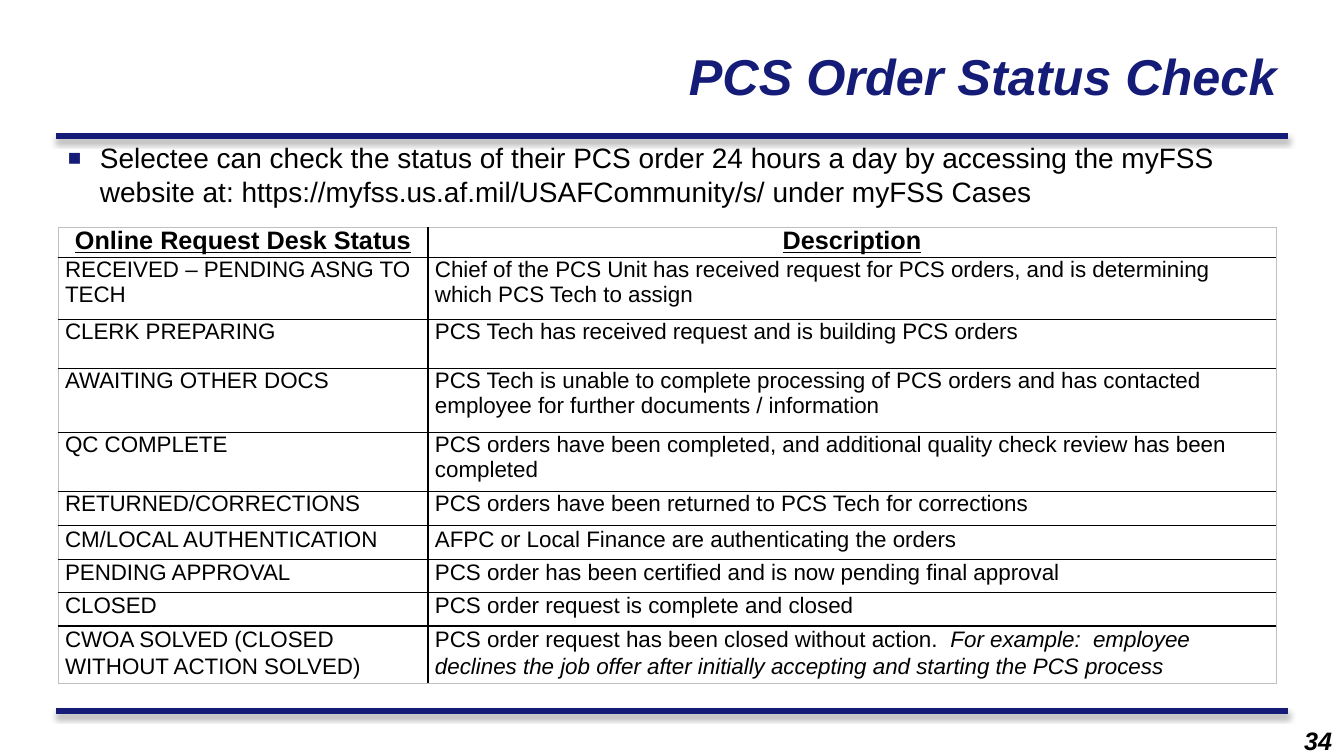
"""Build the PCS order status slide."""
import dataclasses

import lxml.etree
import pptx
import pptx.dml.color
import pptx.enum.shapes
import pptx.enum.text
import pptx.oxml.ns
import pptx.util

ALIGN = pptx.enum.text.PP_ALIGN
ANCHOR = pptx.enum.text.MSO_ANCHOR
PX = 914400 / 100.8


@dataclasses.dataclass(frozen=True)
class Theme:
    font: str = "Arial"
    navy: str = "151C77"
    ink: str = "000000"
    frame: str = "C0C0C0"
    title: int = 36
    body: int = 20
    header: int = 18
    cell: int = 16
    number: int = 18
    rule: float = 4.5


THEME = Theme()
COLUMNS = [370, 848]
HEIGHTS = [29, 62, 49, 64, 59, 34, 34, 33, 34, 53]
LOOSE_FROM = 6
ROWS = [
    ["Online Request Desk Status", "Description"],
    ["RECEIVED – PENDING ASNG TO TECH",
     "Chief of the PCS Unit has received request for PCS orders, and is determining "
     "which PCS Tech to assign"],
    ["CLERK PREPARING", "PCS Tech has received request and is building PCS orders"],
    ["AWAITING OTHER DOCS",
     "PCS Tech is unable to complete processing of PCS orders and has contacted "
     "employee for further documents / information"],
    ["QC COMPLETE",
     "PCS orders have been completed, and additional quality check review has been completed"],
    ["RETURNED/CORRECTIONS", "PCS orders have been returned to PCS Tech for corrections"],
    ["CM/LOCAL AUTHENTICATION", "AFPC or Local Finance are authenticating the orders"],
    ["PENDING APPROVAL", "PCS order has been certified and is now pending final approval"],
    ["CLOSED", "PCS order request is complete and closed"],
    ["CWOA SOLVED (CLOSED WITHOUT ACTION SOLVED)",
     "PCS order request has been closed without action.  "],
]
EXAMPLE = ("For example:  employee declines the job offer after initially accepting "
           "and starting the PCS process")


def px(n):
    return pptx.util.Emu(round(n * PX))


def rgb(color):
    return pptx.dml.color.RGBColor.from_string(color)


def add_xml(parent, tag, **attributes):
    return lxml.etree.SubElement(parent, pptx.oxml.ns.qn(tag), attributes)


def set_font(p, size, color=THEME.ink, bold=False, italic=False, underline=False):
    f = p.font
    f.name, f.size, f.color.rgb = THEME.font, pptx.util.Pt(size), rgb(color)
    f.bold, f.italic, f.underline = bold, italic, underline


def add_text(s, box, text, anchor=ANCHOR.TOP, align=ALIGN.LEFT):
    tf = s.shapes.add_textbox(*map(px, box)).text_frame
    tf.word_wrap = True
    tf.vertical_anchor = anchor
    p = tf.paragraphs[0]
    p.text, p.alignment = text, align
    return p


def add_bullet(p, indent):
    pPr = p._p.get_or_add_pPr()
    pPr.set("marL", str(px(indent)))
    pPr.set("indent", str(-px(indent)))
    add_xml(add_xml(pPr, "a:buClr"), "a:srgbClr", val=THEME.navy)
    add_xml(pPr, "a:buSzPct", val="80000")
    add_xml(pPr, "a:buFont", typeface=THEME.font)
    add_xml(pPr, "a:buChar", char="■")


def add_rule(s, y):
    line = s.shapes.add_connector(
        pptx.enum.shapes.MSO_CONNECTOR.STRAIGHT, px(56), px(y), px(1288), px(y))
    line.line.color.rgb = rgb(THEME.navy)
    line.line.width = pptx.util.Pt(THEME.rule)
    effects = add_xml(line._element.spPr, "a:effectLst")
    shadow = add_xml(effects, "a:outerShdw", blurRad=str(pptx.util.Pt(4)),
                     dist=str(pptx.util.Pt(3)), dir="5400000", rotWithShape="0")
    add_xml(add_xml(shadow, "a:srgbClr", val=THEME.ink), "a:alpha", val="40000")


def set_borders(cell, outer):
    tcPr = cell._tc.get_or_add_tcPr()
    for side in "LRTB":
        color, width = (THEME.frame, 0.5) if side in outer else (THEME.ink, 1)
        ln = add_xml(tcPr, f"a:ln{side}", w=str(pptx.util.Pt(width)))
        add_xml(add_xml(ln, "a:solidFill"), "a:srgbClr", val=color)


def fill_cell(cell, text, row, outer):
    set_borders(cell, outer)
    cell.fill.background()
    cell.margin_left = cell.margin_right = px(7)
    cell.margin_top = cell.margin_bottom = 0
    p = cell.text_frame.paragraphs[0]
    p.text = text
    if row == 0:
        p.alignment = ALIGN.CENTER
        set_font(p, THEME.header, bold=True, underline=True)
    else:
        if row >= LOOSE_FROM:
            p.line_spacing = 1.07
        set_font(p, THEME.cell)
    return p


def add_status_table(s):
    table = s.shapes.add_table(len(ROWS), len(COLUMNS), px(58), px(227),
                               px(sum(COLUMNS)), px(sum(HEIGHTS))).table
    table.first_row = table.horz_banding = False
    for column, width in zip(table.columns, COLUMNS):
        column.width = px(width)
    for i, (height, texts) in enumerate(zip(HEIGHTS, ROWS)):
        table.rows[i].height = px(height)
        edge = {0: "T", len(ROWS) - 1: "B"}.get(i, "")
        for j, text in enumerate(texts):
            p = fill_cell(table.cell(i, j), text, i, edge + "LR"[j])
    r = p.add_run()
    r.text, r.font.italic = EXAMPLE, True


def main():
    prs = pptx.Presentation()
    prs.slide_width, prs.slide_height = px(1344), px(756)
    s = prs.slides.add_slide(prs.slide_layouts[6])
    for y in (711, 136):
        add_rule(s, y)
    p = add_text(s, (531, 40, 756, 70), "PCS Order Status Check", ANCHOR.MIDDLE, ALIGN.RIGHT)
    set_font(p, THEME.title, THEME.navy, bold=True, italic=True)
    p = add_text(s, (58, 136, 1218, 80),
                 "Selectee can check the status of their PCS order 24 hours a day by accessing "
                 "the myFSS website at: https://myfss.us.af.mil/USAFCommunity/s/ under myFSS Cases")
    add_bullet(p, 32)
    set_font(p, THEME.body)
    add_status_table(s)
    p = add_text(s, (1174, 720, 168, 33), "34", align=ALIGN.RIGHT)
    set_font(p, THEME.number, bold=True, italic=True)
    prs.save("out.pptx")


if __name__ == "__main__":
    main()
